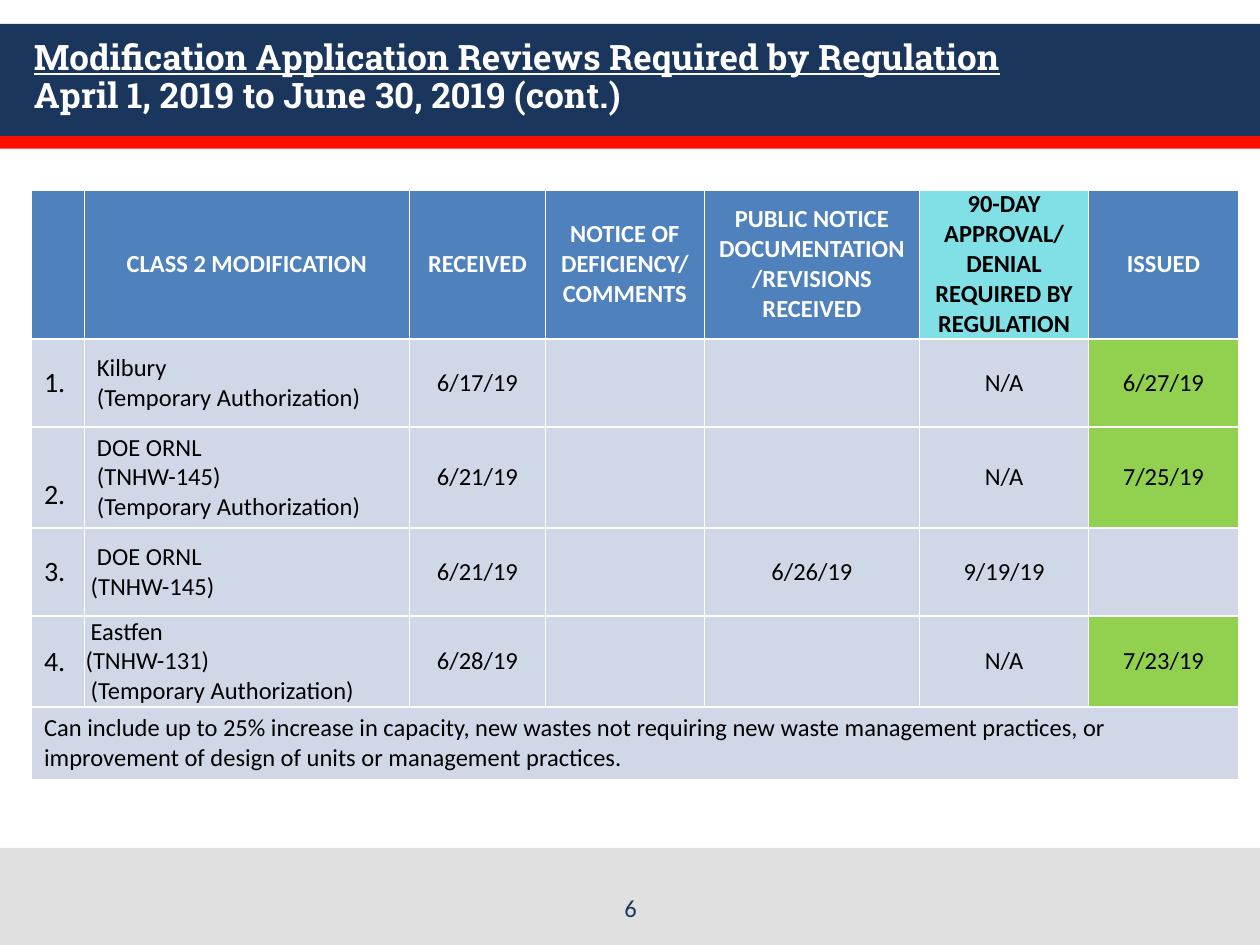
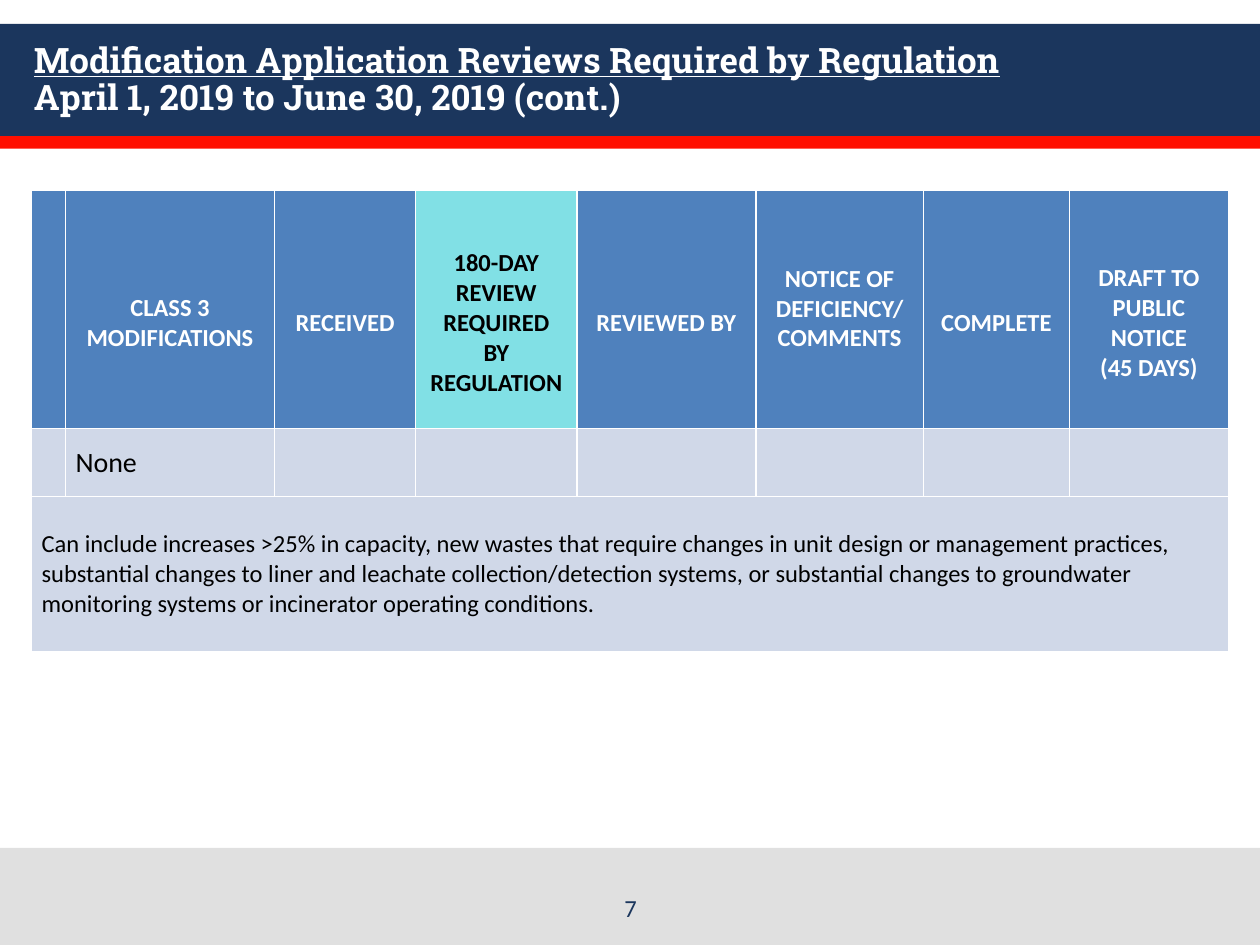
"""Build two slides of permit modification tables under a shared title band."""
from lxml import etree
from pptx import Presentation
from pptx import util as u
from pptx.dml.color import RGBColor
from pptx.enum import shapes, text
from pptx.oxml import ns

PX = 9144
THEME = dict(navy="1B365D", red="FF0F00", grey="E0E0E0", white="FFFFFF", black="000000",
             head="4F81BD", body="D0D8E8", due="81E0E5", done="92D050",
             slab="Roboto Slab", sans="Calibri", title=20, big=16, base=14)
LEFT, MID = text.PP_ALIGN.LEFT, text.PP_ALIGN.CENTER
TITLE = "Modification Application Reviews Required by Regulation|April 1, 2019 to June 30, 2019 (cont.)"
BANDS = [(19, 89, "navy"), (108, 10, "red"), (673, 77, "grey")]

SLIDES = [
    dict(page="6", top=17, pad=10, due=5,
         cols=[42, 258, 108, 126, 171, 134, 119],
         tall=[119, 70, 80, 70, 72, 58],
         rows=[["", "CLASS 2 MODIFICATION", "RECEIVED", "NOTICE OF DEFICIENCY/ COMMENTS",
                "PUBLIC NOTICE DOCUMENTATION/REVISIONS RECEIVED",
                "90-DAY APPROVAL/ DENIAL|REQUIRED BY REGULATION", "ISSUED"],
               ["1.", "Kilbury|(Temporary Authorization)", "6/17/19", "", "", "N/A", "6/27/19"],
               ["2.", "DOE ORNL|(TNHW-145)|(Temporary Authorization)", "6/21/19", "", "", "N/A", "7/25/19"],
               ["3.", "DOE ORNL|(TNHW-145)", "6/21/19", "", "6/26/19", "9/19/19", ""],
               ["4.", "Eastfen|(TNHW-131)|(Temporary Authorization)", "6/28/19", "", "", "N/A", "7/23/19"],
               ["Can include up to 25% increase in capacity, new wastes not requiring new waste management "
                "practices, or|improvement of design of units or management practices."]],
         large=[(1, 0), (2, 0), (3, 0), (4, 0)],
         done=[(1, 6), (2, 6), (4, 6)],
         dent={(3, 1): [9, 4], (4, 1): [4, 0, 4]},
         drop={(2, 0): 27}),
    dict(page="7", top=19, pad=8, due=3,
         cols=[27, 166, 112, 128, 142, 133, 116, 126],
         tall=[190, 54, 123],
         rows=[["", "CLASS 3 MODIFICATIONS", "RECEIVED", "180-DAY|REVIEW REQUIRED|BY REGULATION",
                "REVIEWED BY", "NOTICE OF DEFICIENCY/ COMMENTS", "COMPLETE",
                "DRAFT TO PUBLIC NOTICE|(45 DAYS)"],
               ["", "None", "", "", "", "", "", ""],
               ["Can include increases >25% in capacity, new wastes that require changes in unit design "
                "or management practices,|substantial changes to liner and leachate collection/detection "
                "systems, or substantial changes to groundwater monitoring systems or incinerator "
                "operating conditions."]],
         large=[(1, 1)], done=[], dent={},
         drop={(0, c): 23 for c in (1, 2, 3, 4, 6, 7)}),
]


def write(frame, words, tint, side=LEFT, dents=None, **form):
    """Fill a text frame with one paragraph for each part of the words."""
    frame.word_wrap = True
    for n, part in enumerate(words.split("|")):
        para = frame.paragraphs[0] if n == 0 else frame.add_paragraph()
        para.alignment = side
        if dents:
            para._p.get_or_add_pPr().set("marL", str(dents[n] * PX))
        run = para.add_run()
        run.text = part
        for key, val in form.items():
            setattr(run.font, key, val)
        run.font.color.rgb = RGBColor.from_string(THEME[tint])


def edge(cell, top):
    """Draw white cell borders, with the given width at the top."""
    prop = cell._tc.get_or_add_tcPr()
    for n, (name, wide) in enumerate(dict(lnL=1, lnR=1, lnT=top, lnB=1).items()):
        line = etree.Element(ns.qn("a:" + name), w=str(u.Pt(wide)))
        fill = etree.SubElement(line, ns.qn("a:solidFill"))
        etree.SubElement(fill, ns.qn("a:srgbClr"), val=THEME["white"])
        prop.insert(n, line)


deck = Presentation()
deck.slide_width, deck.slide_height = 1000 * PX, 750 * PX

for page in SLIDES:
    slide = deck.slides.add_slide(deck.slide_layouts[6])
    for top, high, tint in BANDS:
        band = slide.shapes.add_shape(shapes.MSO_SHAPE.RECTANGLE, 0, top * PX, 1000 * PX, high * PX)
        band.shadow.inherit = False
        band.fill.solid()
        band.fill.fore_color.rgb = RGBColor.from_string(THEME[tint])
        band.line.fill.background()

    title = slide.shapes.add_textbox(17 * PX, page["top"] * PX, 967 * PX, 90 * PX).text_frame
    title.vertical_anchor = text.MSO_ANCHOR.MIDDLE
    write(title, TITLE, "white", name=THEME["slab"], size=u.Pt(THEME["title"]), bold=True)
    title.paragraphs[0].runs[0].font.underline = True
    for para in title.paragraphs:
        para.line_spacing = 0.9

    cols, tall, rows = page["cols"], page["tall"], page["rows"]
    grid = slide.shapes.add_table(len(tall), len(cols), 25 * PX, 150 * PX,
                                  sum(cols) * PX, sum(tall) * PX).table
    for col, wide in zip(grid.columns, cols):
        col.width = wide * PX
    for row, high in zip(grid.rows, tall):
        row.height = high * PX
    last = len(tall) - 1
    grid.cell(last, 0).merge(grid.cell(last, len(cols) - 1))

    for r in range(len(tall)):
        for c in range(len(cols)):
            cell, spot, head = grid.cell(r, c), (r, c), r == 0
            due = head and c == page["due"]
            tint = "due" if due else "head" if head else "done" if spot in page["done"] else "body"
            cell.fill.solid()
            cell.fill.fore_color.rgb = RGBColor.from_string(THEME[tint])
            edge(cell, 3 if head else 1)
            side = 8 if head else 1
            form = dict(margin_left=side * PX, margin_right=side * PX, margin_bottom=0,
                        margin_top=page["drop"].get(spot, 0) * PX,
                        vertical_anchor=text.MSO_ANCHOR.MIDDLE)
            for key, val in form.items():
                setattr(cell, key, val)
            words = rows[r][c] if c < len(rows[r]) else ""
            if words:
                flush = not head and c < 2
                dents = page["dent"].get(spot, [page["pad"] - 1] * 3) if flush else None
                size = THEME["big" if spot in page["large"] else "base"]
                write(cell.text_frame, words, "white" if head and not due else "black",
                      LEFT if flush else MID, dents, name=THEME["sans"], size=u.Pt(size), bold=head)

    foot = slide.shapes.add_textbox(342 * PX, 697 * PX, 317 * PX, 40 * PX).text_frame
    foot.vertical_anchor = text.MSO_ANCHOR.BOTTOM
    write(foot, page["page"], "navy", MID, name=THEME["sans"], size=u.Pt(THEME["base"]))

deck.save("out.pptx")
